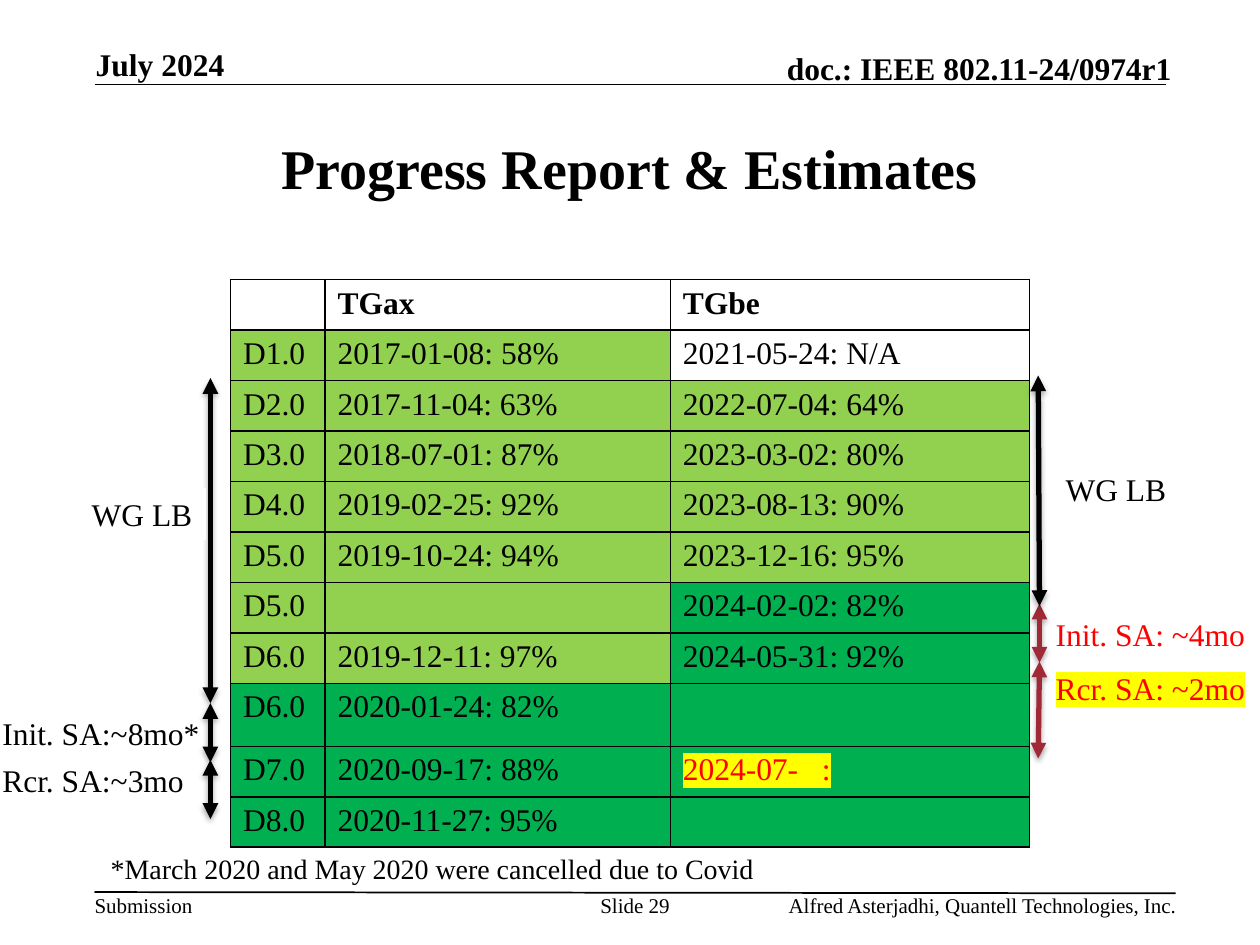
"""Build the progress report slide with its draft table and ballot spans."""
from lxml.etree import SubElement
from pptx import Presentation
from pptx.dml.color import RGBColor
from pptx.enum.shapes import MSO_CONNECTOR, MSO_SHAPE
from pptx.enum.text import MSO_ANCHOR, PP_ALIGN
from pptx.oxml import parse_xml
from pptx.oxml.ns import nsdecls, qn
from pptx.util import Inches, Pt

BLACK = RGBColor(0, 0, 0)
WHITE = RGBColor(255, 255, 255)
RED = RGBColor(255, 0, 0)
WINE = RGBColor(0x9F, 0x29, 0x36)
LIME = RGBColor(0x92, 0xD0, 0x50)
GREEN = RGBColor(0, 0xB0, 0x50)
FACE = "Times New Roman"
COLS, ROWS = 100, 75

DRAFTS = [
    ("", "TGax", "TGbe"),
    ("D1.0", "2017-01-08: 58%", "2021-05-24: N/A"),
    ("D2.0", "2017-11-04: 63%", "2022-07-04: 64%"),
    ("D3.0", "2018-07-01: 87%", "2023-03-02: 80%"),
    ("D4.0", "2019-02-25: 92%", "2023-08-13: 90%"),
    ("D5.0", "2019-10-24: 94%", "2023-12-16: 95%"),
    ("D5.0", "", "2024-02-02: 82%"),
    ("D6.0", "2019-12-11: 97%", "2024-05-31: 92%"),
    ("D6.0", "2020-01-24: 82%", ""),
    ("D7.0", "2020-09-17: 88%", "2024-07-   :"),
    ("D8.0", "2020-11-27: 95%", ""),
]
LIMITS = [(1, 8), (1, 8), (2, 6)]
TALL = 8
OPEN = (9, 2)


def grid(*units):
    """Turn grid units of a tenth of an inch into lengths."""
    return [Inches(unit / 10) for unit in units]


def write(frame, text, size=18, color=BLACK, bold=False, align=PP_ALIGN.LEFT, mark=False):
    """Put one styled paragraph into a text frame."""
    para = frame.paragraphs[0]
    para.alignment = align
    font = para.font
    font.name, font.size, font.bold = FACE, Pt(size), bold
    font.color.rgb = color
    if text:
        run = para.add_run()
        run.text = text
        if mark:
            glow = SubElement(run._r.get_or_add_rPr(), qn("a:highlight"))
            SubElement(glow, qn("a:srgbClr"), val="FFFF00")


def label(slide, spot, text, inset=0, anchor=MSO_ANCHOR.TOP, **style):
    """Add a plain text box."""
    frame = slide.shapes.add_textbox(*grid(*spot)).text_frame
    frame.word_wrap = True
    frame.vertical_anchor = anchor
    frame.margin_left = frame.margin_right = Inches(inset)
    frame.margin_top = frame.margin_bottom = Inches(inset / 2)
    write(frame, text, **style)


def plate(slide, spot, text, **style):
    """Add a white rectangle with text."""
    shape = slide.shapes.add_shape(MSO_SHAPE.RECTANGLE, *grid(*spot))
    shape.shadow.inherit = False
    shape.fill.solid()
    shape.fill.fore_color.rgb = WHITE
    shape.line.color.rgb = WHITE
    shape.line.width = Pt(0.75)
    shape.text_frame.word_wrap = True
    shape.text_frame.vertical_anchor = MSO_ANCHOR.TOP
    shape.text_frame.margin_right = 0
    write(shape.text_frame, text, **style)


def rule(slide, ends, color=BLACK, width=1):
    """Draw a straight line without shadow."""
    line = slide.shapes.add_connector(MSO_CONNECTOR.STRAIGHT, *grid(*ends))
    line.line.color.rgb = color
    line.line.width = Pt(width)
    SubElement(line._element.spPr, qn("a:effectLst"))
    return line


def span(slide, ends, color=BLACK):
    """Draw a double-headed arrow with a soft shadow."""
    line = rule(slide, ends, color, 3)
    stroke = line.line._get_or_add_ln()
    for tip in ("headEnd", "tailEnd"):
        SubElement(stroke, qn(f"a:{tip}"), type="triangle")
    line._element.spPr.find(qn("a:effectLst")).append(parse_xml(
        f'<a:outerShdw {nsdecls("a")} blurRad="40000" dist="23000" dir="5400000" rotWithShape="0">'
        '<a:srgbClr val="000000"><a:alpha val="35000"/></a:srgbClr></a:outerShdw>'))


def frame_cell(cell):
    """Give a cell thin black borders."""
    props = cell._tc.get_or_add_tcPr()
    for side in "LRTB":
        props.append(parse_xml(
            f'<a:ln{side} {nsdecls("a")} w="12700"><a:solidFill>'
            f'<a:srgbClr val="000000"/></a:solidFill></a:ln{side}>'))


def shade(row, col):
    """Choose the fill by ballot stage."""
    first, last = LIMITS[col]
    return WHITE if row < first else LIME if row < last else GREEN


def chart_drafts(slide):
    """Add the table of drafts."""
    table = slide.shapes.add_table(
        len(DRAFTS), len(LIMITS), *grid(18.3, 22.2, 63.4, 45)).table
    table.first_row = table.horz_banding = False
    for col, width in zip(table.columns, grid(7.5, 27.4, 28.5)):
        col.width = width
    for row, texts in enumerate(DRAFTS):
        table.rows[row].height = grid(5 if row == TALL else 4)[0]
        for col, text in enumerate(texts):
            cell = table.cell(row, col)
            frame_cell(cell)
            cell.fill.solid()
            cell.fill.fore_color.rgb = shade(row, col)
            due = (row, col) == OPEN
            write(cell.text_frame, text, color=RED if due else BLACK,
                  bold=row == 0, mark=due)


def edges(slide):
    """Add the header and footer."""
    low, right = MSO_ANCHOR.BOTTOM, PP_ALIGN.RIGHT
    rule(slide, (7.5, 6.7, 92.5, 6.7))
    rule(slide, (7.5, 70.8, 93.3, 70.9))
    label(slide, (7.6, 3.6, 20.5, 3), "July 2024", anchor=low, bold=True)
    label(slide, (54.7, 3.9, 38.3, 3), "doc.: IEEE 802.11-24/0974r1",
          anchor=low, bold=True, align=right)
    label(slide, (7.5, 70.8, 7.8, 2), "Submission", size=12)
    label(slide, (47.5, 70.8, 5.8, 4), "Slide 29", size=12, align=PP_ALIGN.CENTER)
    label(slide, (58.6, 70.8, 34.8, 2),
          "Alfred Asterjadhi, Quantell Technologies, Inc.", size=12, align=right)


def main():
    """Build and save the slide."""
    deck = Presentation()
    deck.slide_width, deck.slide_height = grid(COLS, ROWS)
    slide = deck.slides.add_slide(deck.slide_layouts[6])
    edges(slide)
    label(slide, (7.5, 7.5, 85, 11.6), "Progress Report & Estimates", inset=0.1,
          anchor=MSO_ANCHOR.MIDDLE, size=32, bold=True, align=PP_ALIGN.CENTER)
    label(slide, (7.8, 67.1, 85.8, 3.7),
          "*March 2020 and May 2020 were cancelled due to Covid", inset=0.1, size=16)
    chart_drafts(slide)
    label(slide, (-0.8, 56.2, 19.2, 4), "Init. SA:~8mo*", inset=0.1)
    label(slide, (-0.8, 59.9, 17.5, 4), "Rcr. SA:~3mo", inset=0.1)
    plate(slide, (82.8, 48.3, 17.2, 4), "Init. SA: ~4mo", color=RED)
    plate(slide, (82.8, 52.6, 17.2, 4), "Rcr. SA: ~2mo", color=RED, mark=True)
    span(slide, (16.7, 55.8, 16.7, 60.5))
    span(slide, (16.7, 60.3, 16.7, 65))
    span(slide, (82.5, 47.9, 82.5, 52.6), WINE)
    span(slide, (82.5, 52.5, 82.4, 60.2), WINE)
    span(slide, (16.7, 30, 16.7, 55.8))
    span(slide, (82.4, 29.8, 82.5, 48.1))
    for left, top in ((6.3, 38.8), (83.6, 36.8)):
        plate(slide, (left, top, 10, 4), "WG LB")
    deck.save("out.pptx")


if __name__ == "__main__":
    main()
